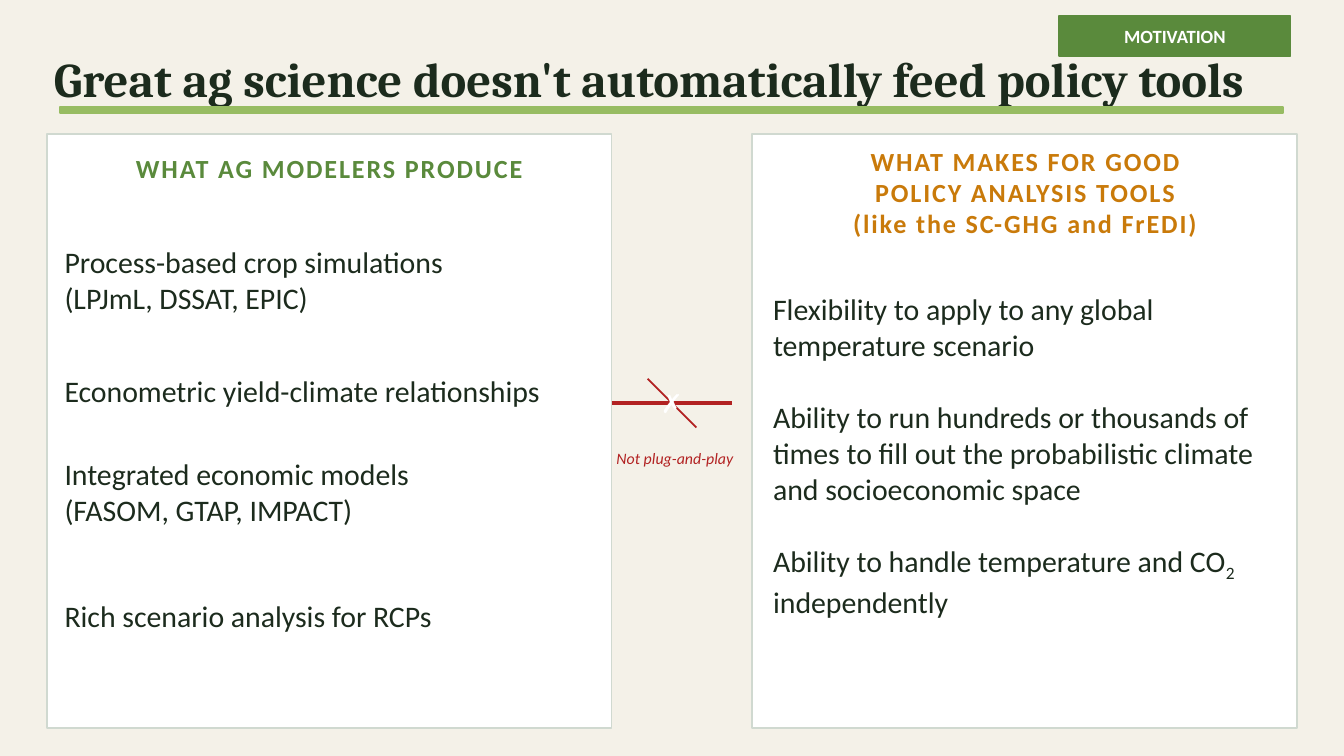
import pptx
import pptx.util
import pptx.dml.color
import pptx.enum.shapes
import pptx.enum.text
import pptx.oxml.ns
from lxml import etree

Cm, Pt = pptx.util.Cm, pptx.util.Pt
RGBColor = pptx.dml.color.RGBColor
ALIGN = pptx.enum.text.PP_ALIGN
qn = pptx.oxml.ns.qn

# Colours
CREAM = RGBColor(0xF4, 0xF1, 0xE8)
GREEN = RGBColor(0x5A, 0x8A, 0x3C)
LIGHT_GREEN = RGBColor(0x97, 0xBC, 0x62)
INK = RGBColor(0x1C, 0x2B, 0x1D)
AMBER = RGBColor(0xC9, 0x7A, 0x0A)
RED = RGBColor(0xB2, 0x22, 0x22)
WHITE = RGBColor(0xFF, 0xFF, 0xFF)
PANEL_EDGE = RGBColor(0xD0, 0xD9, 0xD0)

# Content: each paragraph is a list of runs, a tuple run is a subscript
TITLE = "Great ag science doesn't automatically feed policy tools"
BADGE = "MOTIVATION"
LEFT_HEADING = ["WHAT AG MODELERS PRODUCE"]
RIGHT_HEADING = ["WHAT MAKES FOR GOOD", "POLICY ANALYSIS TOOLS", "(like the SC-GHG and FrEDI)"]
MODEL_OUTPUTS = [  # top in cm, lines
    (4.24, ["Process-based crop simulations", "(LPJmL, DSSAT, EPIC)"]),
    (6.35, ["Econometric yield-climate relationships"]),
    (8.26, ["Integrated economic models", "(FASOM, GTAP, IMPACT)"]),
    (10.59, ["Rich scenario analysis for RCPs"]),
]
TOOL_NEEDS = [
    "Flexibility to apply to any global temperature scenario",
    "Ability to run hundreds or thousands of times to fill out the "
    "probabilistic climate and socioeconomic space",
    ["Ability to handle temperature and CO", ("2",), " independently"],
]
GAP_NOTE = "Not plug-and-play"
CROSS = "✗"

# Text formats
TITLE_FORMAT = {"name": "Cambria", "size": Pt(26), "bold": True, "color": INK}
BADGE_FORMAT = {"name": "Calibri", "size": Pt(10), "bold": True, "color": WHITE}
LEFT_HEADING_FORMAT = {"name": "Calibri", "size": Pt(14), "bold": True, "color": GREEN}
RIGHT_HEADING_FORMAT = {**LEFT_HEADING_FORMAT, "color": AMBER}
BODY_FORMAT = {"name": "Calibri", "size": Pt(16), "bold": False, "color": INK}
NOTE_FORMAT = {"name": "Calibri", "size": Pt(8.5), "italic": True, "color": RED}
CROSS_FORMAT = {"name": "Calibri", "size": Pt(14), "bold": True, "color": WHITE}

# Layout in cm: left, top, width, height
PANEL_TOP, PANEL_HEIGHT = 2.54, 11.23
BADGE_BOX = (20.02, 0.3, 4.37, 0.76)
LEFT_PANEL = (0.89, PANEL_TOP, 10.67, PANEL_HEIGHT)
RIGHT_PANEL = (14.22, PANEL_TOP, 10.29, PANEL_HEIGHT)
CROSS_LEFT, CROSS_TOP, CROSS_SIZE = 12.24, 7.16, 0.92
LINK_Y = CROSS_TOP + CROSS_SIZE / 2

presentation = pptx.Presentation()
presentation.slide_width, presentation.slide_height = Cm(25.4), Cm(14.29)
slide = presentation.slides.add_slide(presentation.slide_layouts[1])
slide.background.fill.solid()
slide.background.fill.fore_color.rgb = CREAM


def place(shape, box):
    shape.left, shape.top, shape.width, shape.height = map(Cm, box)


def write(shape, paragraphs, text_format, align=ALIGN.LEFT, gap=0, tracking=0):
    """Fill a shape with plain, unbulleted, vertically centred paragraphs."""
    frame = shape.text_frame
    frame_format = {
        "word_wrap": True, "auto_size": pptx.enum.text.MSO_AUTO_SIZE.NONE,
        "vertical_anchor": pptx.enum.text.MSO_ANCHOR.MIDDLE,
        "margin_left": 0, "margin_top": 0, "margin_right": 0, "margin_bottom": 0,
    }
    for name, value in frame_format.items():
        setattr(frame, name, value)
    for index, runs in enumerate(paragraphs):
        paragraph = frame.add_paragraph() if index else frame.paragraphs[0]
        properties = paragraph._p.get_or_add_pPr()
        properties.set("marL", "0")
        properties.set("indent", "0")
        etree.SubElement(properties, qn("a:buNone"))
        paragraph.alignment = align
        paragraph.space_before = Pt(gap if index else 0)
        for text in [runs] if isinstance(runs, str) else runs:
            run = paragraph.add_run()
            run.text = text if isinstance(text, str) else text[0]
            for name, value in text_format.items():
                if name == "color":
                    run.font.color.rgb = value
                else:
                    setattr(run.font, name, value)
            run_properties = run._r.get_or_add_rPr()
            if tracking:
                run_properties.set("spc", str(tracking))
            if isinstance(text, tuple):
                run_properties.set("baseline", "-25000")


def add_text(box, paragraphs, text_format, **options):
    shape = slide.shapes.add_textbox(*map(Cm, box))
    write(shape, paragraphs, text_format, **options)


def add_rectangle(box, fill, edge):
    shape = slide.shapes.add_shape(pptx.enum.shapes.MSO_SHAPE.RECTANGLE, *map(Cm, box))
    shape.shadow.inherit = False
    shape.fill.solid()
    shape.fill.fore_color.rgb = fill
    shape.line.color.rgb = edge
    shape.line.width = Pt(1)
    return shape


def add_line(ends, width):
    line = slide.shapes.add_connector(pptx.enum.shapes.MSO_CONNECTOR.STRAIGHT, *map(Cm, ends))
    line.line.color.rgb = RED
    line.line.width = Pt(width)
    etree.SubElement(line._element.spPr, qn("a:effectLst"))


# Title, badge and rule
title, needs = slide.placeholders
place(title, (1.02, 0.69, 23.11, 1.57))
write(title, [TITLE], TITLE_FORMAT)
badge = add_rectangle(BADGE_BOX, GREEN, GREEN)
write(badge, [BADGE], BADGE_FORMAT, align=ALIGN.CENTER)
add_rectangle((1.14, 2.03, 23.11, 0.1), LIGHT_GREEN, LIGHT_GREEN)

# Left panel
add_rectangle(LEFT_PANEL, WHITE, PANEL_EDGE)
add_text((1.27, 2.79, 9.91, 0.76), LEFT_HEADING, LEFT_HEADING_FORMAT,
         align=ALIGN.CENTER, tracking=100)
for top, lines in MODEL_OUTPUTS:
    add_text((1.22, top, 9.96, 2.08), lines, BODY_FORMAT)

# Broken link between the panels
add_line((LEFT_PANEL[0] + LEFT_PANEL[2], LINK_Y, 13.84, LINK_Y), 2.5)
add_line((CROSS_LEFT, CROSS_TOP, CROSS_LEFT + CROSS_SIZE, CROSS_TOP + CROSS_SIZE), 1)
add_text((CROSS_LEFT, CROSS_TOP, CROSS_SIZE, CROSS_SIZE), [CROSS], CROSS_FORMAT,
         align=ALIGN.CENTER)
add_text((11.13, 8.18, 3.25, 0.97), [GAP_NOTE], NOTE_FORMAT, align=ALIGN.CENTER)

# Right panel, with the list brought in front of it
add_rectangle(RIGHT_PANEL, WHITE, PANEL_EDGE)
add_text((14.61, 3.25, 9.53, 0.76), RIGHT_HEADING, RIGHT_HEADING_FORMAT,
         align=ALIGN.CENTER, tracking=100)
place(needs, (14.61, 6.25, 9.65, 4.7))
write(needs, TOOL_NEEDS, BODY_FORMAT, gap=19.5)
slide.shapes.element.append(needs.element)

presentation.save("out.pptx")
